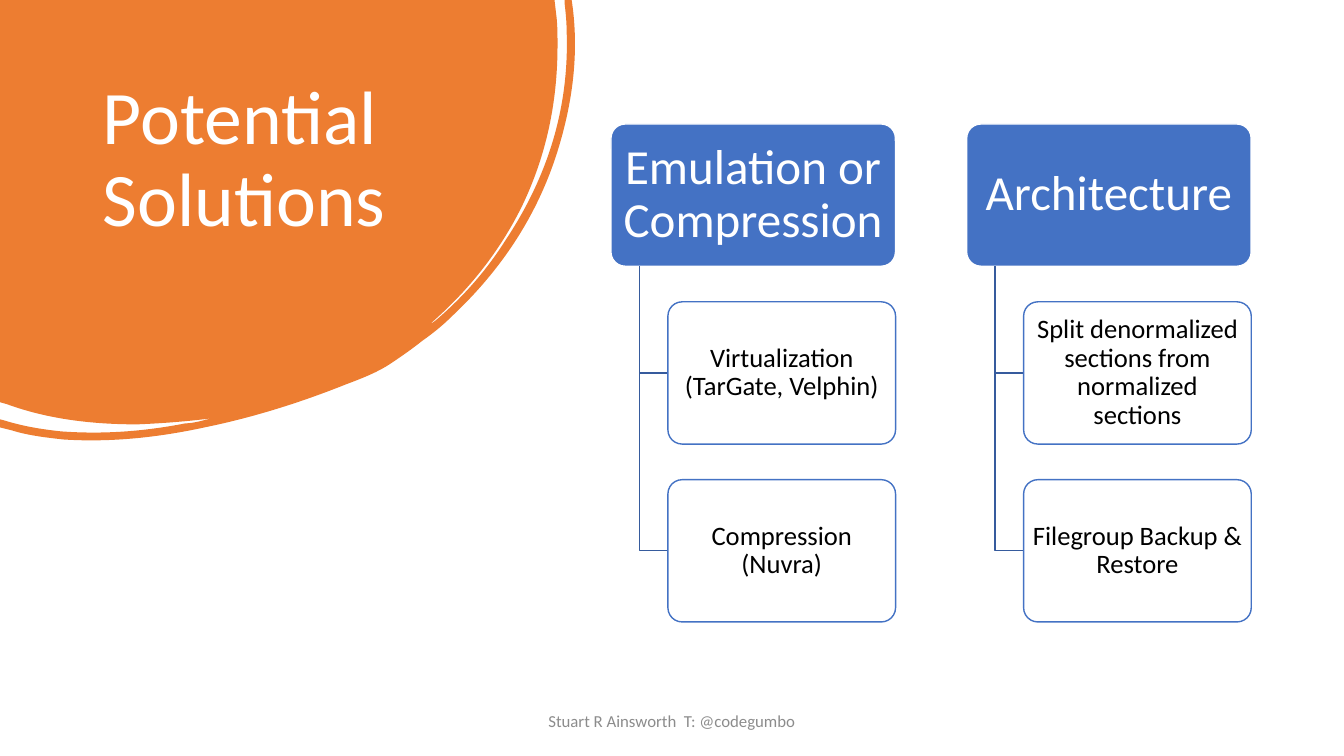
from dataclasses import dataclass
from lxml.etree import SubElement
from pptx import Presentation
from pptx.dml.color import RGBColor
from pptx.enum.shapes import MSO_SHAPE
from pptx.enum.text import MSO_ANCHOR, PP_ALIGN
from pptx.oxml.ns import qn
from pptx.util import Inches, Pt


@dataclass(frozen=True)
class Theme:
    font: str = "Calibri"
    white: str = "FFFFFF"
    black: str = "000000"
    orange: str = "ED7D31"
    blue: str = "4472C4"
    link: str = "365B9D"
    gray: str = "8C8C8C"
    title: int = 54
    head: int = 35
    item: int = 19
    footer: int = 12


T = Theme()
WIDTH, HEIGHT = 13.33, 7.5

BRANCHES = [
    ("Emulation or Compression",
     ["Virtualization (TarGate, Velphin)", "Compression (Nuvra)"]),
    ("Architecture",
     ["Split denormalized sections from normalized sections",
      "Filegroup Backup & Restore"]),
]

# Corner outline from (0, 0): pairs are line ends, sixes are cubic curves
CORNER = [
    (5.5, 0), (5.52, 0.17),
    (5.53, 0.26, 5.53, 0.36, 5.53, 0.45), (5.53, 1.01, 5.42, 1.54, 5.18, 2.04),
    (4.96, 2.49, 4.65, 2.88, 4.27, 3.21), (4.29, 3.21, 4.3, 3.19, 4.32, 3.18),
    (4.59, 2.95, 4.82, 2.69, 5.01, 2.39), (5.43, 1.76, 5.65, 1.07, 5.62, 0.3),
    (5.62, 0.21, 5.61, 0.12, 5.6, 0.03), (5.6, 0), (5.67, 0), (5.68, 0.07),
    (5.74, 0.54, 5.68, 1.02, 5.53, 1.5), (5.33, 2.14, 4.97, 2.68, 4.48, 3.14),
    (4.39, 3.23, 4.29, 3.31, 4.19, 3.38), (4.09, 3.46, 3.99, 3.53, 3.87, 3.61),
    (3.75, 3.69, 3.6, 3.75, 3.44, 3.81), (2.99, 3.99, 2.52, 4.14, 2.03, 4.24),
    (1.57, 4.34, 1.1, 4.39, 0.63, 4.36), (0.45, 4.34, 0.28, 4.32, 0.12, 4.27),
    (0, 4.24), (0, 4.16), (0.04, 4.17),
    (0.23, 4.23, 0.42, 4.26, 0.61, 4.28), (1.03, 4.31, 1.43, 4.28, 1.84, 4.2),
    (1.89, 4.2, 1.93, 4.19, 1.98, 4.18), (2.02, 4.17, 2.06, 4.16, 2.1, 4.15),
    (1.86, 4.18, 1.61, 4.2, 1.36, 4.21), (0.92, 4.21, 0.48, 4.16, 0.07, 4.01),
    (0, 3.99),
]


def rgb(color):
    return RGBColor.from_string(color)


def write(sp, text, size, color, align=PP_ALIGN.CENTER,
          anchor=MSO_ANCHOR.MIDDLE, spacing=0.9, inset=None):
    tf = sp.text_frame
    tf.word_wrap = True
    tf.vertical_anchor = anchor
    if inset is not None:
        tf.margin_left = tf.margin_right = Inches(inset)
        tf.margin_top = tf.margin_bottom = Inches(inset)
    p = tf.paragraphs[0]
    p.text = text
    p.alignment = align
    p.line_spacing = spacing
    p.font.name, p.font.size = T.font, Pt(size)
    p.font.color.rgb = rgb(color)


def text_box(s, box, text, size, color, **style):
    sp = s.shapes.add_textbox(*map(Inches, box))
    write(sp, text, size, color, **style)


def outline(s, points, close):
    """A freeform through points in inches, without shadow."""
    start, *rest = [(Inches(x), Inches(y)) for x, y in points]
    fb = s.shapes.build_freeform(*start)
    fb.add_line_segments(rest, close=close)
    sp = fb.convert_to_shape()
    sp.shadow.inherit = False
    return sp


def bend(sp, segments):
    """Join the three points of each six-number segment into one curve."""
    lines = iter(sp._element.findall(".//" + qn("a:lnTo")))
    for seg in segments:
        group = [next(lines) for _ in range(len(seg) // 2)]
        if len(group) == 3:
            curve = group[0]
            curve.tag = qn("a:cubicBezTo")
            for line in group[1:]:
                curve.append(line[0])
                line.getparent().remove(line)


def card(s, box, fill, line):
    sp = s.shapes.add_shape(MSO_SHAPE.ROUNDED_RECTANGLE, *map(Inches, box))
    sp.adjustments[0] = 0.1
    sp.shadow.inherit = False
    sp.fill.solid()
    sp.fill.fore_color.rgb = rgb(fill)
    sp.line.color.rgb = rgb(line)
    sp.line.width = Pt(1)
    return sp


def elbow(s, x, y, x_end, y_end):
    sp = outline(s, [(x, y), (x, y_end), (x_end, y_end)], close=False)
    sp.fill.background()
    sp.line.color.rgb = rgb(T.link)
    sp.line.width = Pt(1)


def corner(s, title_box):
    points = [(0, 0)] + [seg[i:i + 2] for seg in CORNER
                         for i in range(0, len(seg), 2)]
    sp = outline(s, points, close=True)
    bend(sp, CORNER)
    sp.fill.solid()
    sp.fill.fore_color.rgb = rgb(T.orange)
    sp.line.fill.background()
    text_box(s, title_box, "Potential Solutions", T.title, T.white,
             align=PP_ALIGN.LEFT, anchor=MSO_ANCHOR.TOP)


def branch(s, box, heading, items):
    """A heading card with its items hung below on elbows."""
    x, y, w, h = box
    trunk, item_x = x + 0.1 * w, x + 0.2 * w
    head = card(s, box, T.blue, T.white)
    write(head, heading, T.head, T.white, inset=0.06)
    for i, text in enumerate(items, 1):
        top = y + i * 1.25 * h
        elbow(s, trunk, y + h, item_x, top + h / 2)
        item = card(s, (item_x, top, 0.8 * w, h), T.white, T.blue)
        color = item._element.spPr.find(qn("a:solidFill"))[0]
        SubElement(color, qn("a:alpha"), val="90000")
        write(item, text, T.item, T.black, inset=0.04)


def hierarchy(s, box):
    x, y, w, h = box
    # Gaps are a quarter of a card, both across and down
    card_w = w / (1.25 * len(BRANCHES) - 0.25)
    rows = 1 + max(len(items) for _, items in BRANCHES)
    card_h = h / (1.25 * rows - 0.25)
    for i, (heading, items) in enumerate(BRANCHES):
        branch(s, (x + i * 1.25 * card_w, y, card_w, card_h), heading, items)


def main():
    prs = Presentation()
    prs.slide_width, prs.slide_height = Inches(WIDTH), Inches(HEIGHT)
    s = prs.slides.add_slide(prs.slide_layouts[6])
    corner(s, (0.92, 0.74, 3.52, 2.22))
    hierarchy(s, (6.06, 1.23, 6.35, 4.94))
    # Footer, centred across the slide
    text_box(s, ((WIDTH - 4.5) / 2, 6.95, 4.5, 0.4),
             "Stuart R Ainsworth  T: @codegumbo", T.footer, T.gray, spacing=1.0)
    prs.save("out.pptx")


if __name__ == "__main__":
    main()
